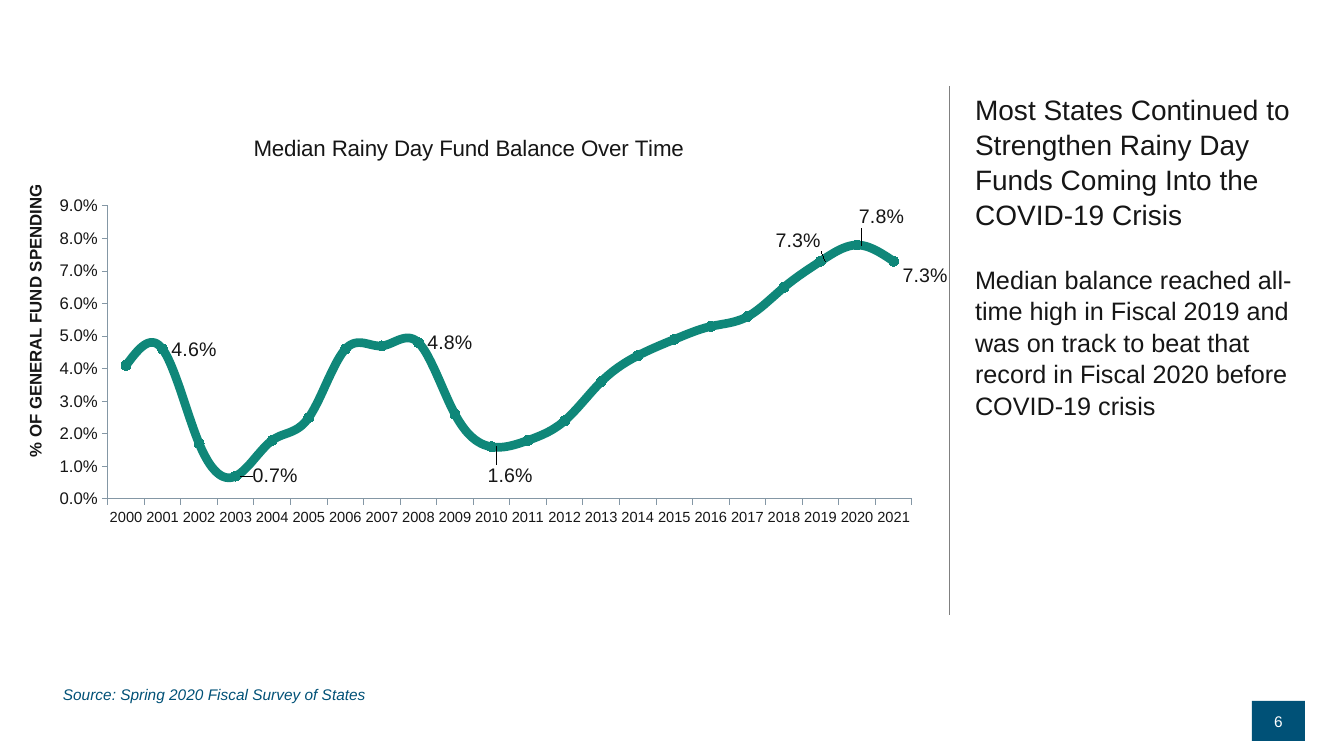
from lxml import etree
from pptx import Presentation
from pptx.chart.data import CategoryChartData as ChartData
from pptx.dml.color import RGBColor
from pptx.enum.chart import XL_CHART_TYPE as Kind, XL_LABEL_POSITION as Place
from pptx.enum.chart import XL_MARKER_STYLE as Mark, XL_TICK_MARK as Tick
from pptx.enum.shapes import MSO_CONNECTOR as Link, MSO_SHAPE as Form
from pptx.enum.text import MSO_ANCHOR as Anchor, MSO_AUTO_SIZE as Fit, PP_ALIGN as Align
from pptx.oxml.ns import qn
from pptx.util import Pt

HEAD = [
    ("Most States Continued to Strengthen Rainy Day Funds Coming Into the COVID-19 Crisis", 20, 0),
    ("Median balance reached all-time high in Fiscal 2019 and was on track to beat that "
     "record in Fiscal 2020 before COVID-19 crisis", 18, 23),
]
TITLE = "Median Rainy Day Fund Balance Over Time"
AXIS = "% OF GENERAL FUND SPENDING"
SOURCE = "Source: Spring 2020 Fiscal Survey of States"
PAGE = "6"
START = 2000
RATES = [4.1, 4.6, 1.7, 0.7, 1.8, 2.5, 4.6, 4.7, 4.8, 2.6, 1.6,
         1.8, 2.4, 3.6, 4.4, 4.9, 5.3, 5.6, 6.5, 7.3, 7.8, 7.3]
SHIFTS = {2001: (0, 0), 2003: (8, 0), 2008: (0, 0), 2010: (-13, 29),
          2019: (-54, -21), 2020: (-7, -28), 2021: (0, 14)}

INK, BLUE, TEAL, GRAY, RULE = "161616", "005177", "0F8779", "8497A5", "808080"
FONT = "Arial"
SCALE = 914400 / 100.8
WIDE, HIGH = 932, 442


def px(*nums):
    return [round(n * SCALE) for n in nums]


def color(code):
    return RGBColor.from_string(code)


def style(font, size, code=INK, bold=False, italic=False):
    font.name, font.size, font.bold, font.italic = FONT, Pt(size), bold, italic
    font.color.rgb = color(code)


def layout(node, after, left, top, width=None, height=None, edge=True):
    for old in node.findall(qn("c:layout")):
        node.remove(old)
    box = etree.Element(qn("c:layout"))
    man = etree.SubElement(box, qn("c:manualLayout"))
    vals = []
    if width:
        vals.append(("layoutTarget", "inner"))
    if edge:
        vals += [("xMode", "edge"), ("yMode", "edge")]
    vals += [("x", left / WIDE), ("y", top / HIGH)]
    if width:
        vals += [("w", width / WIDE), ("h", height / HIGH)]
    for tag, val in vals:
        text = val if isinstance(val, str) else f"{val:.4f}"
        etree.SubElement(man, qn("c:" + tag)).set("val", text)
    if after:
        node.find(qn(after)).addnext(box)
    else:
        node.insert(0, box)


def words(frame, text, size, code, italic=False):
    frame.word_wrap = True
    frame.text = text
    style(frame.paragraphs[0].runs[0].font, size, code, italic=italic)


def add_head(slide):
    head = slide.shapes.title
    head.left, head.top, head.width, head.height = px(965, 86, 341, 529)
    frame = head.text_frame
    frame.word_wrap, frame.auto_size = True, Fit.NONE
    frame.vertical_anchor = Anchor.TOP
    for spot, (text, size, gap) in enumerate(HEAD):
        para = frame.add_paragraph() if spot else frame.paragraphs[0]
        para.text = text
        para.alignment, para.line_spacing = Align.LEFT, 1.04
        para.space_before = Pt(gap)
        style(para.runs[0].font, size)


def add_graph(slide):
    data = ChartData(number_format="0.0%")
    data.categories = [str(START + n) for n in range(len(RATES))]
    data.add_series("Series 1", [round(r / 100, 3) for r in RATES])
    chart = slide.shapes.add_chart(Kind.LINE_MARKERS, *px(16, 117, WIDE, HIGH), data).chart
    style(chart.font, 12)
    chart.has_legend = False
    chart.has_title = True
    chart.chart_title.text_frame.text = TITLE
    style(chart.chart_title.text_frame.paragraphs[0].runs[0].font, 16)

    years, rates = chart.category_axis, chart.value_axis
    for axis, size in ((years, 10.5), (rates, 12)):
        axis.has_major_gridlines = False
        axis.major_tick_mark, axis.minor_tick_mark = Tick.OUTSIDE, Tick.NONE
        axis.format.line.color.rgb = color(GRAY)
        axis.format.line.width = Pt(0.75)
        style(axis.tick_labels.font, size)
    rates.minimum_scale, rates.maximum_scale, rates.major_unit = 0, 0.09, 0.01
    rates.tick_labels.number_format = "0.0%"
    rates.tick_labels.number_format_is_linked = False
    rates.has_title = True
    rates.axis_title.text_frame.text = AXIS
    style(rates.axis_title.text_frame.paragraphs[0].runs[0].font, 12, bold=True)

    line = chart.plots[0].series[0]
    line.smooth = True
    line.format.line.color.rgb = color(TEAL)
    line.format.line.width = Pt(6.25)
    line.marker.style, line.marker.size = Mark.CIRCLE, 7
    line.marker.format.fill.solid()
    line.marker.format.fill.fore_color.rgb = color(TEAL)
    line.marker.format.line.color.rgb = color(TEAL)
    line.data_labels.show_value = False
    for year in SHIFTS:
        label = line.points[year - START].data_label
        style(label.font, 14)
        label.position = Place.RIGHT

    root = chart.element
    for node, shift in zip(root.iter(qn("c:dLbl")), SHIFTS.values()):
        if any(shift):
            layout(node, "c:idx", *shift, edge=False)
    layout(chart.chart_title._element, "c:tx", 234, 13)
    layout(rates.axis_title._element, "c:tx", 6, 64)
    layout(next(root.iter(qn("c:plotArea"))), None, 92, 89, 806, 293)


def add_rule(slide):
    rule = slide.shapes.add_connector(Link.STRAIGHT, *px(949, 86, 949, 615))
    rule.line.color.rgb = color(RULE)
    rule.line.width = Pt(0.5)
    etree.SubElement(rule._element.spPr, qn("a:effectLst"))


def add_foot(slide):
    note = slide.shapes.add_textbox(*px(53, 680, 736, 40))
    words(note.text_frame, SOURCE, 11, BLUE, italic=True)
    badge = slide.shapes.add_shape(Form.RECTANGLE, *px(1252, 701, 53, 40))
    badge.shadow.inherit = False
    badge.fill.solid()
    badge.fill.fore_color.rgb = color(BLUE)
    badge.line.fill.background()
    words(badge.text_frame, PAGE, 11, "FFFFFF")
    badge.text_frame.vertical_anchor = Anchor.MIDDLE
    badge.text_frame.paragraphs[0].alignment = Align.CENTER


def main():
    deck = Presentation()
    deck.slide_width, deck.slide_height = px(1344, 756)
    slide = deck.slides.add_slide(deck.slide_layouts[5])
    add_rule(slide)
    add_head(slide)
    add_graph(slide)
    add_foot(slide)
    deck.save("out.pptx")


if __name__ == "__main__":
    main()
